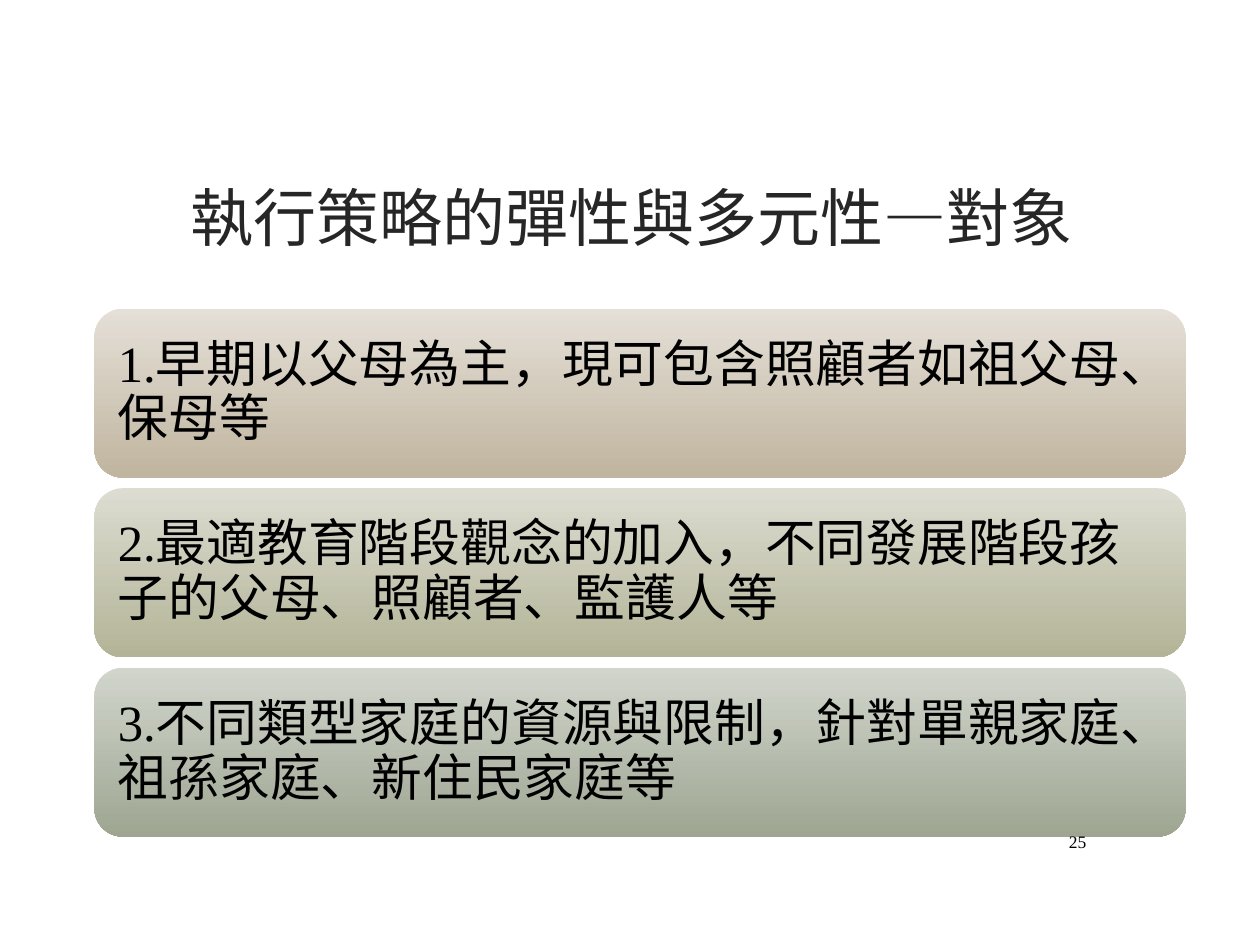
import pptx
import pptx.util
import pptx.dml.color
import pptx.enum.shapes
import pptx.enum.text

Inches, Pt = pptx.util.Inches, pptx.util.Pt
ALIGN = pptx.enum.text.PP_ALIGN

TITLE = "執行策略的彈性與多元性—對象"
CARDS = [
    ("1.早期以父母為主，現可包含照顧者如祖父母、保母等", "sand"),
    ("2.最適教育階段觀念的加入，不同發展階段孩子的父母、照顧者、監護人等", "olive"),
    ("3.不同類型家庭的資源與限制，針對單親家庭、祖孫家庭、新住民家庭等", "sage"),
]
PAGE_NUMBER = "25"

COLORS = {"title": "262626", "text": "000000"}
GRADIENTS = {
    "sand": ("E4DFD7", "C0B59F"),
    "olive": ("DCDCD1", "B3B497"),
    "sage": ("D1D5CC", "9EA692"),
}
FONT = "Times New Roman"
LEFT, TOP, WIDTH, HEIGHT = 0.75, 2.45, 8.66, 1.34
ROW_STEP = 1.425
INSET = 0.12


def rgb(value):
    return pptx.dml.color.RGBColor.from_string(value)


def write(sp, text, size, color, align):
    tf = sp.text_frame
    tf.word_wrap = True
    tf.vertical_anchor = pptx.enum.text.MSO_ANCHOR.MIDDLE
    p = tf.paragraphs[0]
    p.alignment = align
    r = p.add_run()
    r.text = text
    r.font.name = FONT
    r.font.size = Pt(size)
    r.font.color.rgb = rgb(COLORS[color])
    return tf


def add_text(s, box, text, size, color, align):
    sp = s.shapes.add_textbox(*map(Inches, box))
    write(sp, text, size, color, align)


def add_card(s, row, text, gradient):
    sp = s.shapes.add_shape(
        pptx.enum.shapes.MSO_SHAPE.ROUNDED_RECTANGLE,
        Inches(LEFT), Inches(TOP + row * ROW_STEP), Inches(WIDTH), Inches(HEIGHT))
    sp.shadow.inherit = False
    sp.line.fill.background()
    sp.fill.gradient()
    sp.fill.gradient_angle = 270
    for stop, color, position in zip(sp.fill.gradient_stops, GRADIENTS[gradient], (0, 1)):
        stop.color.rgb = rgb(color)
        stop.position = position
    tf = write(sp, text, 29, "text", ALIGN.LEFT)
    tf.margin_left = tf.margin_right = Inches(INSET)
    tf.margin_top = tf.margin_bottom = Inches(INSET)
    p = tf.paragraphs[0]
    p.line_spacing = 0.9
    p.space_after = Pt(10)


def main():
    prs = pptx.Presentation()
    prs.slide_width, prs.slide_height = Inches(10), Inches(7.5)
    s = prs.slides.add_slide(prs.slide_layouts[6])
    add_text(s, (1.29, 1, 7.44, 1.43), TITLE, 36, "title", ALIGN.CENTER)
    for row, (text, gradient) in enumerate(CARDS):
        add_card(s, row, text, gradient)
    add_text(s, (8.29, 6.52, 0.43, 0.31), PAGE_NUMBER, 10, "text", ALIGN.RIGHT)
    prs.save("out.pptx")


if __name__ == "__main__":
    main()
